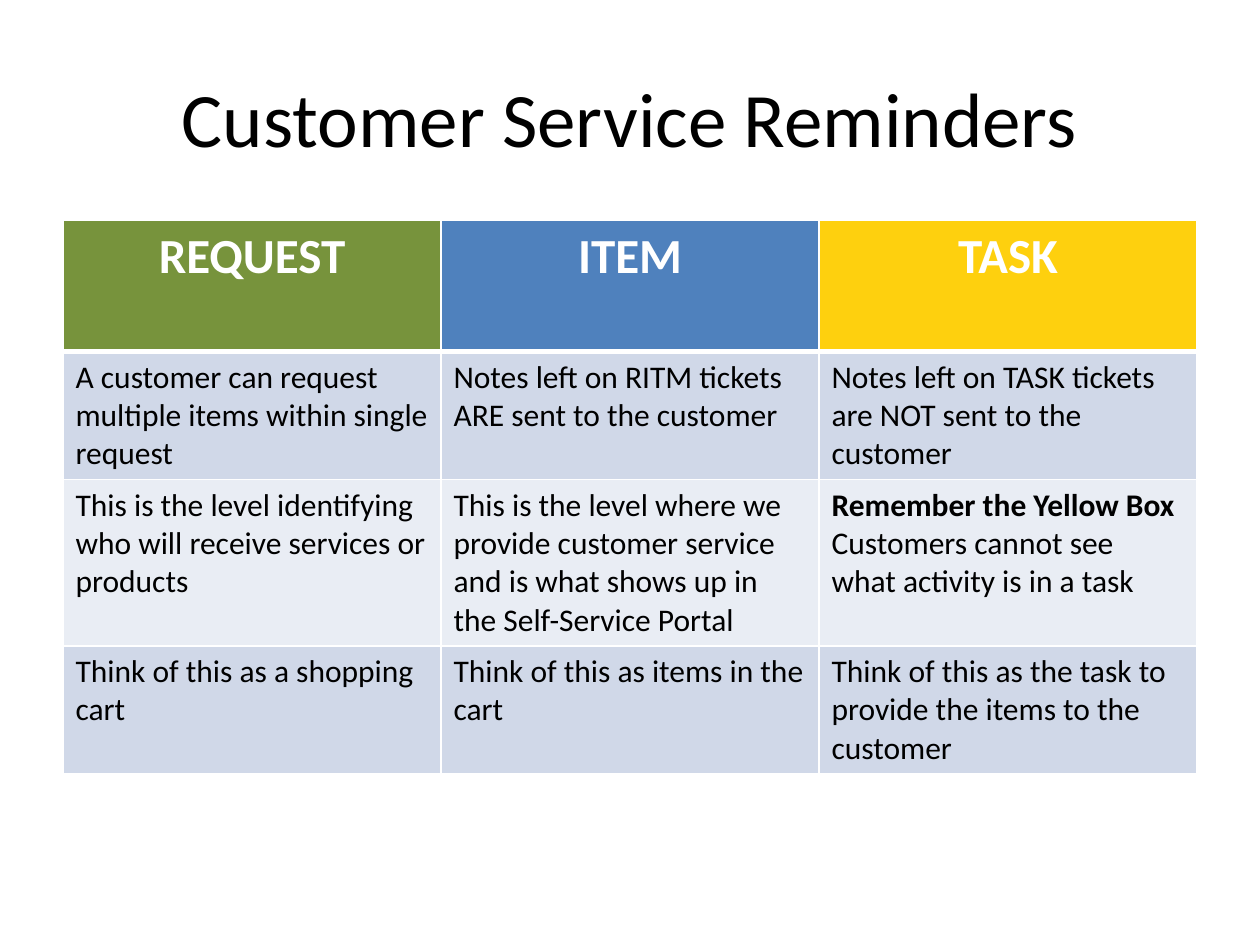
import pptx
import pptx.dml.color
import pptx.enum.text
import pptx.oxml.ns
import pptx.util
from lxml import etree

Pt = pptx.util.Pt
CENTER = pptx.enum.text.PP_ALIGN.CENTER
FONT = "Calibri"
BLACK, WHITE = "000000", "FFFFFF"

TITLE = "Customer Service Reminders"
HEADINGS = [("REQUEST", "77933C"), ("ITEM", "4F81BD"), ("TASK", "FED00E")]
# Each cell is a list of (paragraph, bold)
REMINDERS = [
    [
        [("A customer can request multiple items within single request", False)],
        [("Notes left on RITM tickets ARE sent to the customer", False)],
        [("Notes left on TASK tickets are NOT sent to the customer", False)],
    ],
    [
        [("This is the level identifying who will receive services or products", False)],
        [("This is the level where we provide customer service and is what "
          "shows up in the Self-Service Portal", False)],
        [("Remember the Yellow Box", True),
         ("Customers cannot see what activity is in a task", False)],
    ],
    [
        [("Think of this as a shopping cart", False)],
        [("Think of this as items in the cart", False)],
        [("Think of this as the task to provide the items to the customer", False)],
    ],
]
BANDS = ["D0D8E8", "E9EDF4"]
COLUMN_WIDTH = 216
ROW_HEIGHTS = [75, 73, 95, 73]


def rgb(value):
    return pptx.dml.color.RGBColor.from_string(value)


def add_run(paragraph, text, size, color, bold=False):
    run = paragraph.add_run()
    run.text = text
    run.font.name = FONT
    run.font.size = Pt(size)
    run.font.bold = bold
    run.font.color.rgb = rgb(color)


def set_borders(cell, top, bottom):
    """Draw white cell edges; top and bottom are line widths in points."""
    qn = pptx.oxml.ns.qn
    properties = cell._tc.get_or_add_tcPr()
    for edge, width in (("L", 1), ("R", 1), ("T", top), ("B", bottom)):
        line = etree.SubElement(properties, qn(f"a:ln{edge}"), w=str(Pt(width)))
        fill = etree.SubElement(line, qn("a:solidFill"))
        etree.SubElement(fill, qn("a:srgbClr"), val=WHITE)


def fill_cell(cell, fill, paragraphs, size, color, align=None, top=1, bottom=1):
    set_borders(cell, top, bottom)
    cell.fill.solid()
    cell.fill.fore_color.rgb = rgb(fill)
    frame = cell.text_frame
    for index, (text, bold) in enumerate(paragraphs):
        paragraph = frame.add_paragraph() if index else frame.paragraphs[0]
        paragraph.alignment = align
        add_run(paragraph, text, size, color, bold)


def main():
    deck = pptx.Presentation()
    deck.slide_width, deck.slide_height = Pt(720), Pt(540)
    slide = deck.slides.add_slide(deck.slide_layouts[5])

    title = slide.shapes.title
    title.left, title.top, title.width, title.height = Pt(36), Pt(21.6), Pt(648), Pt(90)
    heading = title.text_frame.paragraphs[0]
    heading.alignment = CENTER
    add_run(heading, TITLE, 44, BLACK)

    table = slide.shapes.add_table(
        len(ROW_HEIGHTS), len(HEADINGS), Pt(36), Pt(126),
        Pt(COLUMN_WIDTH * len(HEADINGS)), Pt(sum(ROW_HEIGHTS))).table
    for column in table.columns:
        column.width = Pt(COLUMN_WIDTH)
    for row, height in zip(table.rows, ROW_HEIGHTS):
        row.height = Pt(height)

    for column, (name, color) in enumerate(HEADINGS):
        fill_cell(table.cell(0, column), color, [(name, True)], 28, WHITE, CENTER, bottom=3)
    for row, reminders in enumerate(REMINDERS, start=1):
        band = BANDS[(row - 1) % len(BANDS)]
        for column, paragraphs in enumerate(reminders):
            fill_cell(table.cell(row, column), band, paragraphs, 18, BLACK,
                      top=3 if row == 1 else 1)

    deck.save("out.pptx")


if __name__ == "__main__":
    main()
